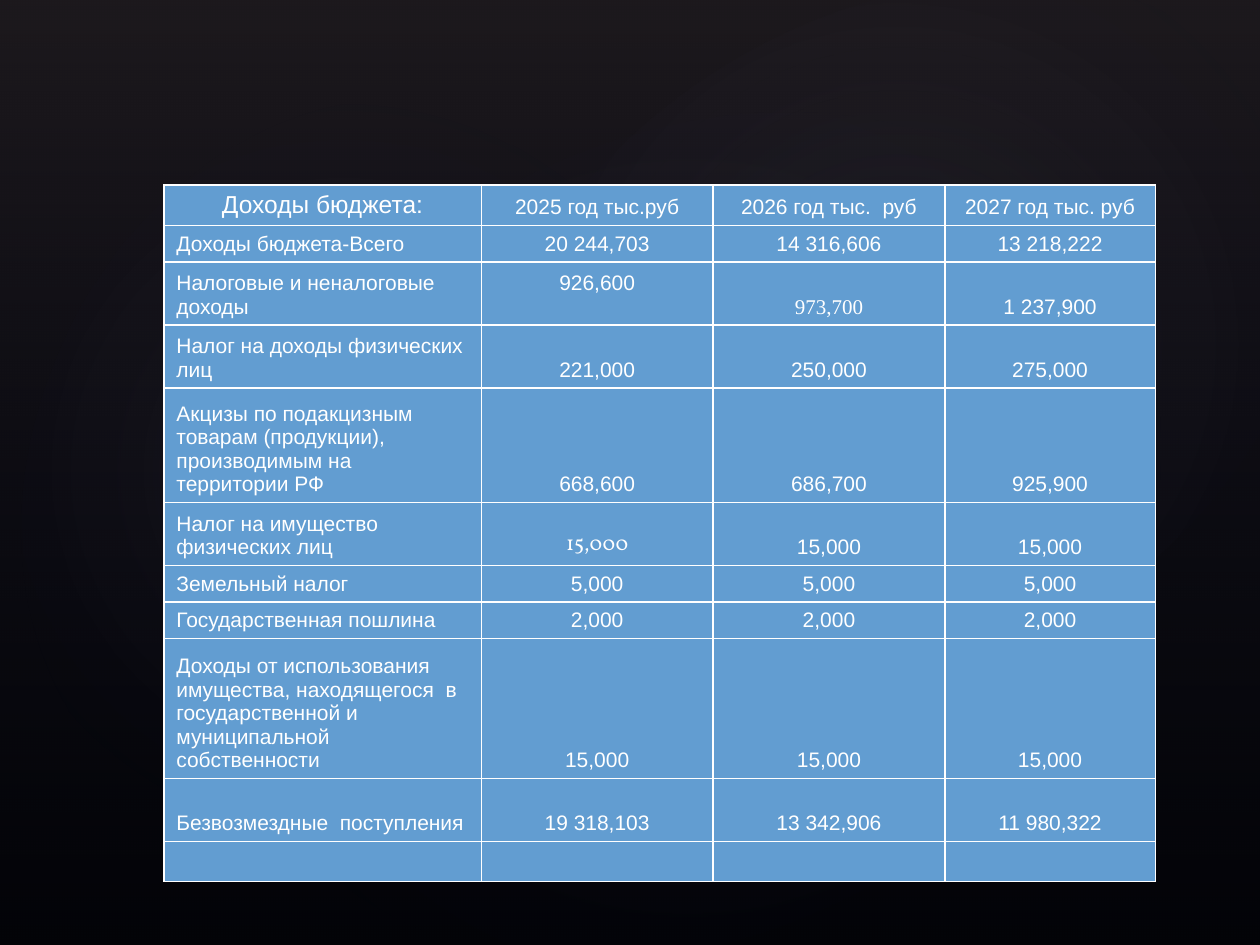
from lxml import etree
from pptx import Presentation
from pptx import util as u
from pptx.dml.color import RGBColor
from pptx.enum import shapes, text
from pptx.oxml import ns


def color(code):
    return RGBColor.from_string(code)


def fill_gradient(shape, stops, direction):
    shape.fill.background()
    old_fill = shape.element.spPr.find(ns.qn("a:noFill"))
    stop_xml = "".join(
        f'<a:gs pos="{place * 1000}"><a:srgbClr val="{code}">'
        f'<a:alpha val="{alpha * 1000}"/></a:srgbClr></a:gs>'
        for place, code, alpha in stops
    )
    gradient = etree.fromstring(
        f'<a:gradFill {ns.nsdecls("a")} rotWithShape="1">'
        f"<a:gsLst>{stop_xml}</a:gsLst>{direction}</a:gradFill>"
    )
    shape.element.spPr.replace(old_fill, gradient)


deck = Presentation()
deck.slide_width, deck.slide_height = u.Inches(10), u.Inches(7.5)
page = deck.slides.add_slide(deck.slide_layouts[6])
page.background.fill.solid()
page.background.fill.fore_color.rgb = color("000000")

linear = '<a:lin ang="5400000" scaled="0"/>'
radial = '<a:path path="circle"><a:fillToRect l="50000" t="50000" r="50000" b="50000"/></a:path>'
rectangle, oval = shapes.MSO_SHAPE.RECTANGLE, shapes.MSO_SHAPE.OVAL
backdrop = [
    (rectangle, (0, 0, 10, 7.5), 0, [(0, "504652", 36), (100, "242852", 10)], linear),
    (oval, (1.5, 1.14, 7.92, 6.24), 328.7, [(0, "C4BCC6", 7), (58, "242852", 0)], radial),
    (oval, (-0.3, 1.28, 6.06, 4.9), 294.3, [(0, "C4BCC6", 8), (58, "242852", 0)], radial),
    (oval, (3.58, 0.13, 7.09, 5.2), 328.7, [(0, "C4BCC6", 8), (58, "242852", 0)], radial),
]
for kind, bounds, angle, stops, direction in backdrop:
    glow = page.shapes.add_shape(kind, *map(u.Inches, bounds))
    glow.rotation = angle
    glow.shadow.inherit = False
    glow.line.fill.background()
    fill_gradient(glow, stops, direction)

budget = [
    ("Доходы бюджета:", "2025 год тыс.руб", "2026 год тыс.  руб", "2027 год тыс. руб"),
    ("Доходы бюджета-Всего", "20 244,703", "14 316,606", "13 218,222"),
    ("Налоговые и неналоговые  доходы", "926,600", "973,700", "1 237,900"),
    ("Налог на доходы физических лиц", "221,000", "250,000", "275,000"),
    ("Акцизы по подакцизным товарам (продукции), производимым на территории РФ",
     "668,600", "686,700", "925,900"),
    ("Налог на имущество физических лиц", "15,000", "15,000", "15,000"),
    ("Земельный налог", "5,000", "5,000", "5,000"),
    ("Государственная пошлина", "2,000", "2,000", "2,000"),
    ("Доходы от использования имущества, находящегося  в государственной и "
     "муниципальной собственности", "15,000", "15,000", "15,000"),
    ("Безвозмездные  поступления", "19 318,103", "13 342,906", "11 980,322"),
    ("", "", "", ""),
]
widths = [2.52, 1.84, 1.84, 1.67]
heights = [0.29, 0.29, 0.5, 0.5, 0.91, 0.5, 0.29, 0.29, 1.11, 0.5, 0.32]
special_fonts = {(2, 2): "Times New Roman", (5, 1): "Vollkorn"}

frame = page.shapes.add_table(
    len(budget), len(widths), u.Inches(1.3), u.Inches(1.47),
    u.Inches(sum(widths)), u.Inches(sum(heights)),
)
table = frame.table
table.first_row = table.horz_banding = False
for column, width in zip(table.columns, widths):
    column.width = u.Inches(width)
for row, height in zip(table.rows, heights):
    row.height = u.Inches(height)

for i, values in enumerate(budget):
    for j, value in enumerate(values):
        cell = table.cell(i, j)
        cell.fill.solid()
        cell.fill.fore_color.rgb = color("629DD1")
        cell.vertical_anchor = text.MSO_ANCHOR.BOTTOM
        if not value:
            cell.margin_top = cell.margin_bottom = 0
            continue
        para = cell.text_frame.paragraphs[0]
        para.text = value
        para.alignment = text.PP_ALIGN.CENTER if i == 0 or j > 0 else text.PP_ALIGN.LEFT
        para.font.size = u.Pt(14 if (i, j) == (0, 0) else 12)
        para.font.name = special_fonts.get((i, j), "Arial")
        para.font.color.rgb = color("FFFFFF")

table.cell(2, 1).margin_bottom = u.Inches(0.24)
deck.save("out.pptx")
